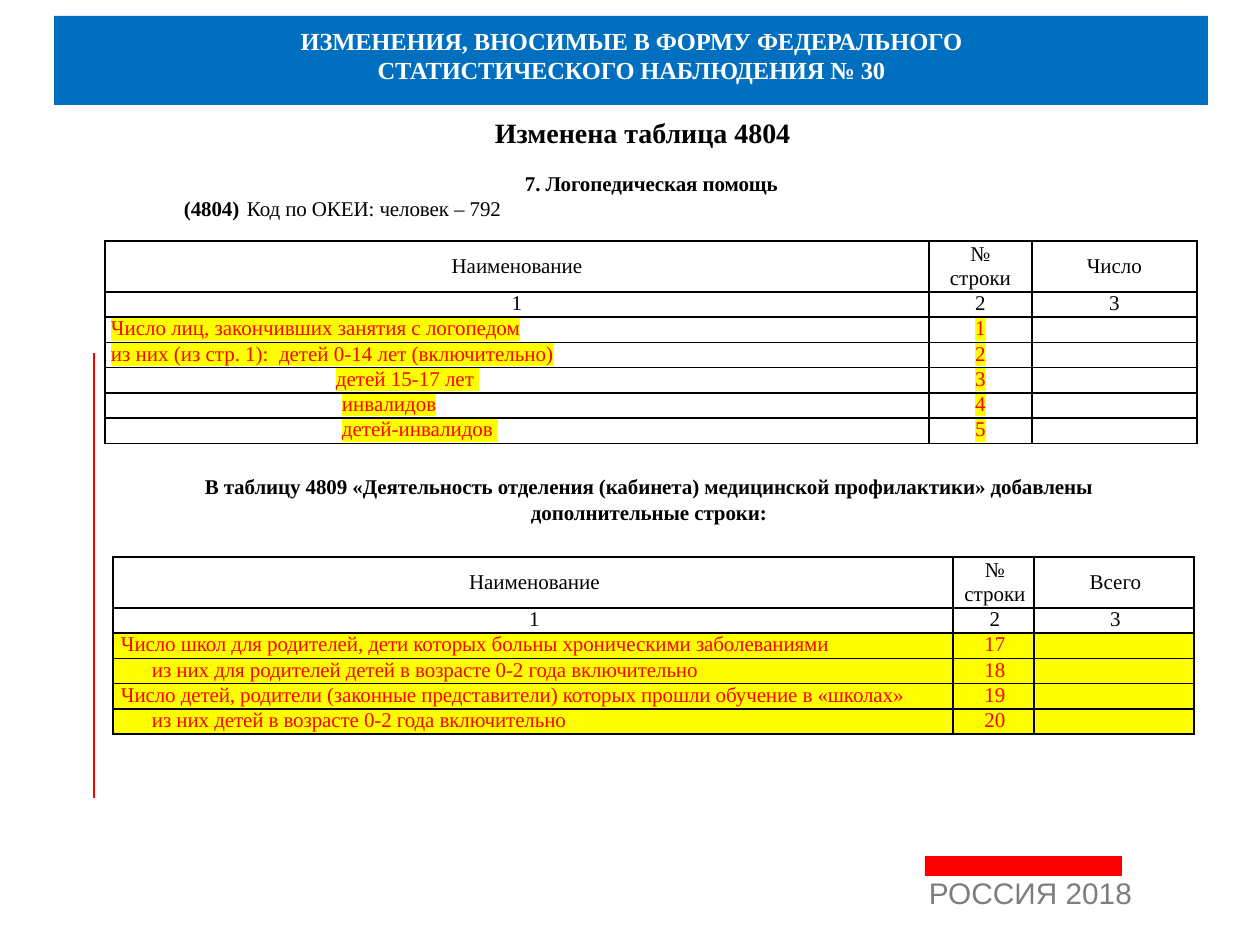
from lxml.etree import SubElement
from pptx import Presentation
from pptx.dml.color import RGBColor
from pptx.enum.shapes import MSO_CONNECTOR, MSO_SHAPE
from pptx.enum.text import MSO_ANCHOR, PP_ALIGN
from pptx.oxml.ns import qn
from pptx.util import Pt

PX = 914400 // 126
COLORS = {"blue": "006FC0", "red": "FF0000", "grey": "7E7E7E",
          "white": "FFFFFF", "black": "000000", "yellow": "FFFF00"}
SERIF = "Times New Roman"
CENTER, LEFT = PP_ALIGN.CENTER, PP_ALIGN.LEFT


def rgb(name):
    return RGBColor.from_string(COLORS[name])


def style(line, text, size=12, color="black", bold=False, align=LEFT,
          face=SERIF, indent=0, tab=0, tracking=0, highlight=False, plain_end=""):
    """Fill one paragraph; indent and tab are pixels, tracking is 1/100 pt."""
    line.alignment = align
    font = line.font
    font.name, font.size, font.bold = face, Pt(size), bold
    font.color.rgb = rgb(color)
    props = line._p.get_or_add_pPr()
    defaults = props.find(qn("a:defRPr"))
    defaults.set("spc", str(tracking))
    props.set("marL", str(indent * PX))
    props.set("indent", "0")
    if tab:
        stops = SubElement(props, qn("a:tabLst"))
        SubElement(stops, qn("a:tab"), pos=str(tab * PX), algn="l")
        defaults.addprevious(stops)
    if not text:
        SubElement(line._p, qn("a:endParaRPr"), sz=str(size * 100))
        return
    run = line.add_run()
    run.text = text
    if highlight:
        mark = SubElement(run._r.get_or_add_rPr(), qn("a:highlight"))
        SubElement(mark, qn("a:srgbClr"), val=COLORS["yellow"])
    if plain_end:
        ending = line.add_run()
        ending.text = plain_end
        ending.font.bold = False


deck = Presentation()
deck.slide_width, deck.slide_height = 1260 * PX, 945 * PX
slide = deck.slides.add_slide(deck.slide_layouts[6])
shapes = slide.shapes

# Title band and footer bar
for color, *box in (("red", 925, 856, 197, 20), ("blue", 54, 16, 1154, 89)):
    band = shapes.add_shape(MSO_SHAPE.RECTANGLE, *[v * PX for v in box])
    band.shadow.inherit = False
    band.fill.solid()
    band.fill.fore_color.rgb = rgb(color)
    band.line.fill.background()

# Revision mark in the margin
revision_mark = shapes.add_connector(
    MSO_CONNECTOR.STRAIGHT, 94 * PX, 353 * PX, 94 * PX, 798 * PX)
revision_mark.line.color.rgb = rgb("red")
revision_mark.line.width = Pt(0.75)
SubElement(revision_mark._element.spPr, qn("a:effectLst"))

# Texts: box, then (text, space before, style) for each line
title = dict(size=14, color="white", bold=True, align=CENTER, tracking=-10)
note = dict(bold=True, align=CENTER, tracking=-5)
texts = [
    ((254, 25, 755, 60), [
        ("ИЗМЕНЕНИЯ, ВНОСИМЫЕ В ФОРМУ ФЕДЕРАЛЬНОГО", 0.9, title),
        ("СТАТИСТИЧЕСКОГО НАБЛЮДЕНИЯ № 30", 0, title)]),
    ((928, 874, 208, 37), [
        ("РОССИЯ 2018", 0, dict(size=17, color="grey", face="Arial", indent=1))]),
    ((183, 115, 983, 108), [
        ("Изменена таблица 4804", 0.9, dict(size=16, bold=True, indent=312)),
        ("7. Логопедическая помощь", 11.8, dict(bold=True, indent=342, tracking=-6)),
        ("(4804)\t", 0, dict(bold=True, indent=1, tab=725, tracking=-5,
                             plain_end="Код по ОКЕИ: человек – 792"))]),
    ((199, 473, 900, 54), [
        ("В таблицу 4809 «Деятельность отделения (кабинета) медицинской "
         "профилактики» добавлены", 1, note),
        ("дополнительные строки:", 0, note)]),
]
for box, lines in texts:
    frame = shapes.add_textbox(*[v * PX for v in box]).text_frame
    frame.word_wrap = True
    frame.margin_left = frame.margin_right = frame.margin_bottom = 0
    frame.margin_top = PX
    for i, (text, before, look) in enumerate(lines):
        line = frame.add_paragraph() if i else frame.paragraphs[0]
        line.space_before = Pt(before)
        style(line, text, **look)

# Tables: place, column widths, whole-cell fill, side margin, header, rows
tables = [
    ((113, 557), (840, 81, 160), True, 0, ("Наименование", "№\nстроки", "Всего"), [
        ("Число школ для родителей, дети которых больны хроническими "
         "заболеваниями", "17", dict(indent=8)),
        ("из них для родителей детей в возрасте 0-2 года включительно",
         "18", dict(indent=39)),
        ("Число детей, родители (законные представители) которых прошли "
         "обучение в «школах»", "19", dict(indent=8)),
        ("из них детей в возрасте 0-2 года включительно", "20", dict(indent=39))]),
    ((105, 241), (824, 103, 165), False, 6, ("Наименование", "№\nстроки", "Число"), [
        ("Число лиц, закончивших занятия с логопедом", "1", {}),
        ("из них (из стр. 1):  детей 0-14 лет (включительно)", "2", {}),
        ("детей 15-17 лет ", "3", dict(indent=225)),
        ("инвалидов", "4", dict(indent=231)),
        ("детей-инвалидов ", "5", dict(indent=231))]),
]
for (left, top), widths, filled, margin, header, rows in tables:
    heights = [51] + [25] * (len(rows) + 1)
    grid = shapes.add_table(len(heights), 3, left * PX, top * PX,
                            sum(widths) * PX, sum(heights) * PX).table
    grid.first_row = grid.horz_banding = False
    for column, width in zip(grid.columns, widths):
        column.width = width * PX
    for row, height in zip(grid.rows, heights):
        row.height = height * PX
    content = [header, ("1", "2", "3")] + [(name, no, "") for name, no, _ in rows]
    for r, values in enumerate(content):
        for c, value in enumerate(values):
            cell = grid.cell(r, c)
            cell.margin_left = cell.margin_right = margin * PX
            cell.margin_top = cell.margin_bottom = 0
            cell.vertical_anchor = MSO_ANCHOR.TOP if r else MSO_ANCHOR.MIDDLE
            look = dict(align=CENTER, indent=3 if filled else 0)
            if r > 1:
                look.update(color="red", highlight=not filled)
                if c == 0:
                    look.update(align=LEFT, tracking=-7 if filled else 0)
                    look.update(rows[r - 2][2])
            for i, text in enumerate(value.split("\n")):
                line = cell.text_frame.add_paragraph() if i else cell.text_frame.paragraphs[0]
                style(line, text, **look)
            # Borders precede the fill in the cell properties
            for side in ("a:lnL", "a:lnR", "a:lnT", "a:lnB"):
                edge = SubElement(cell._tc.get_or_add_tcPr(), qn(side), w="12700")
                SubElement(SubElement(edge, qn("a:solidFill")), qn("a:srgbClr"),
                           val=COLORS["black"])
            if filled and r > 1:
                cell.fill.solid()
                cell.fill.fore_color.rgb = rgb("yellow")
            else:
                cell.fill.background()

deck.save("out.pptx")
